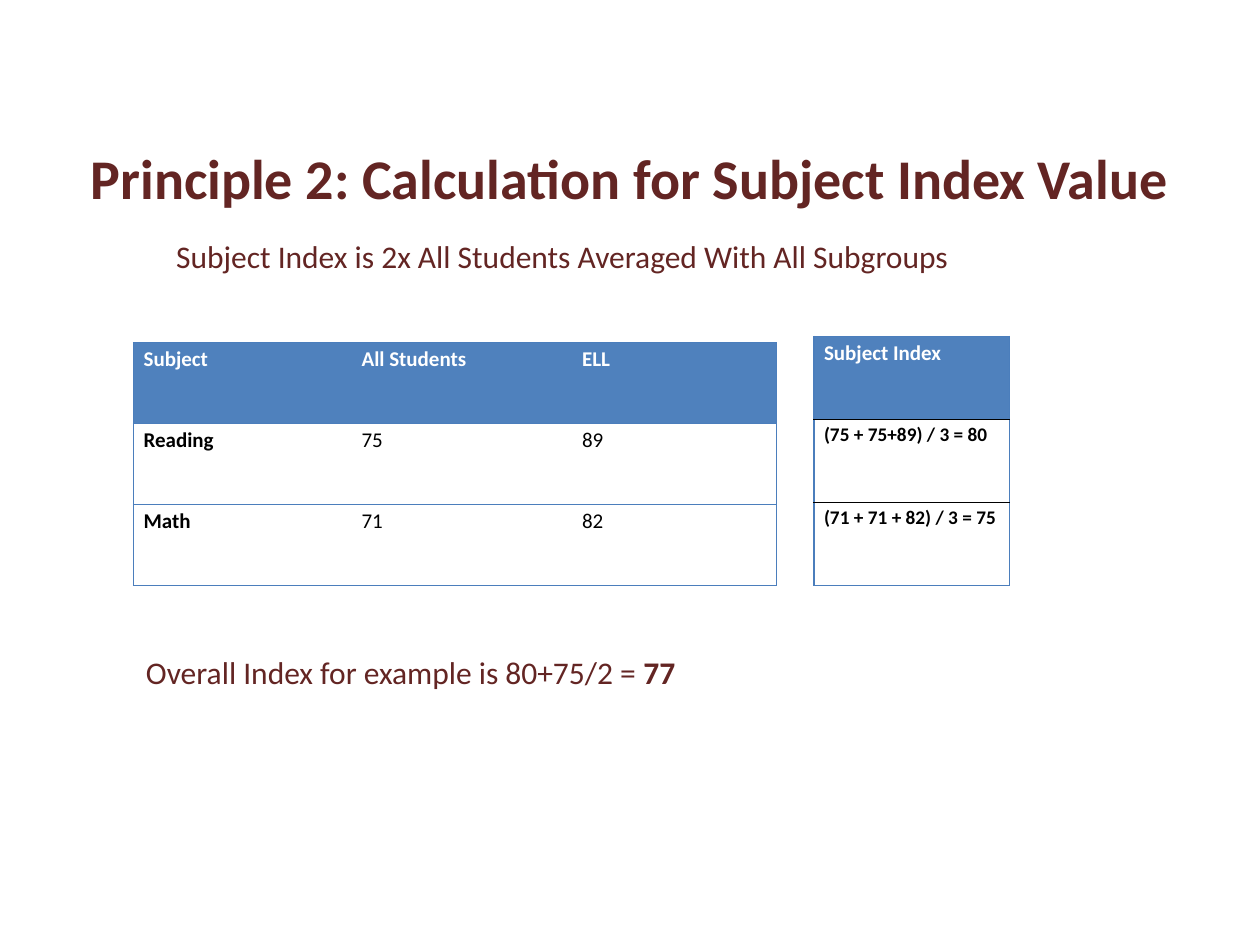
from lxml.etree import SubElement as Sub
from pptx import Presentation
from pptx.dml.color import RGBColor
from pptx.enum.text import MSO_ANCHOR as Anchor, MSO_AUTO_SIZE as Auto, PP_ALIGN as Align
from pptx.oxml.ns import qn
from pptx.util import Inches, Pt

WINE, BLUE, EDGE = "632523", "4F81BD", "4B7EBC"
WHITE, BLACK = "FFFFFF", "000000"
COLS, ROWS = 100, 75


def tint(code):
    """Turn a hex string into a colour."""
    return RGBColor.from_string(code)


def apply(item, **vals):
    """Set each given attribute on an item."""
    for key, val in vals.items():
        setattr(item, key, val)


class Deck:
    """Hold the style, the grid and the current slide."""

    def __init__(self, font):
        """Open a deck with one title-only slide."""
        self.font = font
        self.prs = Presentation()
        apply(self.prs, slide_width=Inches(10), slide_height=Inches(7.5))
        self.slide = self.prs.slides.add_slide(self.prs.slide_layouts[5])

    def grid(self, left, top, width, height):
        """Turn columns and rows into a slide position."""
        col, row = self.prs.slide_width / COLS, self.prs.slide_height / ROWS
        return [round(n) for n in (left * col, top * row, width * col, height * row)]

    def text(self, frame, runs, size, color, **form):
        """Put (words, bold) runs in the first paragraph."""
        para = frame.paragraphs[0]
        apply(para, **form)
        for words, bold in runs:
            run = para.add_run()
            run.text = words
            apply(run.font, name=self.font, size=Pt(size), bold=bold)
            run.font.color.rgb = tint(color)

    def title(self, area, words):
        """Place and fill the title."""
        box = self.slide.shapes.title
        apply(box, **dict(zip(("left", "top", "width", "height"), self.grid(*area))))
        apply(box.text_frame, vertical_anchor=Anchor.MIDDLE, word_wrap=True, auto_size=Auto.NONE)
        self.text(box.text_frame, [(words, True)], 32, WINE, alignment=Align.CENTER)

    def note(self, area, runs, wrap=True, **form):
        """Add a line of running text."""
        frame = self.slide.shapes.add_textbox(*self.grid(*area)).text_frame
        apply(frame, word_wrap=wrap, auto_size=Auto.SHAPE_TO_FIT_TEXT)
        self.text(frame, runs, 18, WINE, **form)

    def edge(self, cell, side, style):
        """Draw one cell border, or none."""
        line = Sub(cell._tc.get_or_add_tcPr(), qn(f"a:ln{side}"))
        if style:
            color, width = style
            line.set("w", str(Pt(width)))
            Sub(Sub(line, qn("a:solidFill")), qn("a:srgbClr")).set("val", color)
        else:
            Sub(line, qn("a:noFill"))

    def table(self, area, widths, data, inner, size=12):
        """Add a table with a blue head, a frame and row rules."""
        grid = self.slide.shapes.add_table(len(data), len(widths), *self.grid(*area)).table
        for col, width in zip(grid.columns, widths):
            col.width = self.grid(0, 0, width, 0)[2]
        outer = (EDGE, 0.75)
        for r, row in enumerate(data):
            for c, words in enumerate(row):
                cell = grid.cell(r, c)
                pad = Inches(0.08)
                apply(cell, margin_left=pad, margin_right=pad, margin_top=0, margin_bottom=0)
                sides = {
                    "L": None if c else outer,
                    "R": outer if c == len(row) - 1 else None,
                    "T": inner if r else outer,
                    "B": inner if r < len(data) - 1 else outer,
                }
                for side, style in sides.items():
                    self.edge(cell, side, style)
                if r:
                    cell.fill.background()
                else:
                    cell.fill.solid()
                    cell.fill.fore_color.rgb = tint(BLUE)
                bold = r == 0 or c == 0
                self.text(cell.text_frame, [(words, bold)], size if r else 12,
                          BLACK if r else WHITE, line_spacing=1.15)


def main():
    """Build and save the slide."""
    deck = Deck("Calibri")
    deck.title((5, 7.8, 90, 12.5), "Principle 2: Calculation for Subject Index Value")
    deck.table((10.6, 27.2, 51, 19.3), (17.3, 17.5, 16.2), [
        ("Subject", "All Students", "ELL"),
        ("Reading", "75", "89"),
        ("Math", "71", "82"),
    ], (EDGE, 0.75))
    deck.table((64.6, 26.7, 15.5, 19.8), (15.5,), [
        ("Subject Index",),
        ("(75 + 75+89) / 3 = 80",),
        ("(71 + 71 + 82) / 3 = 75",),
    ], (BLACK, 1), size=11)
    deck.note((13, 18.3, 65.2, 4),
              [("Subject Index is 2x All Students Averaged With All Subgroups", False)], wrap=False)
    deck.note((10.6, 50.9, 44.2, 4.5),
              [("Overall Index for example is 80+75/2 = ", False), ("77", True)], line_spacing=1.15)
    deck.prs.save("out.pptx")


if __name__ == "__main__":
    main()
